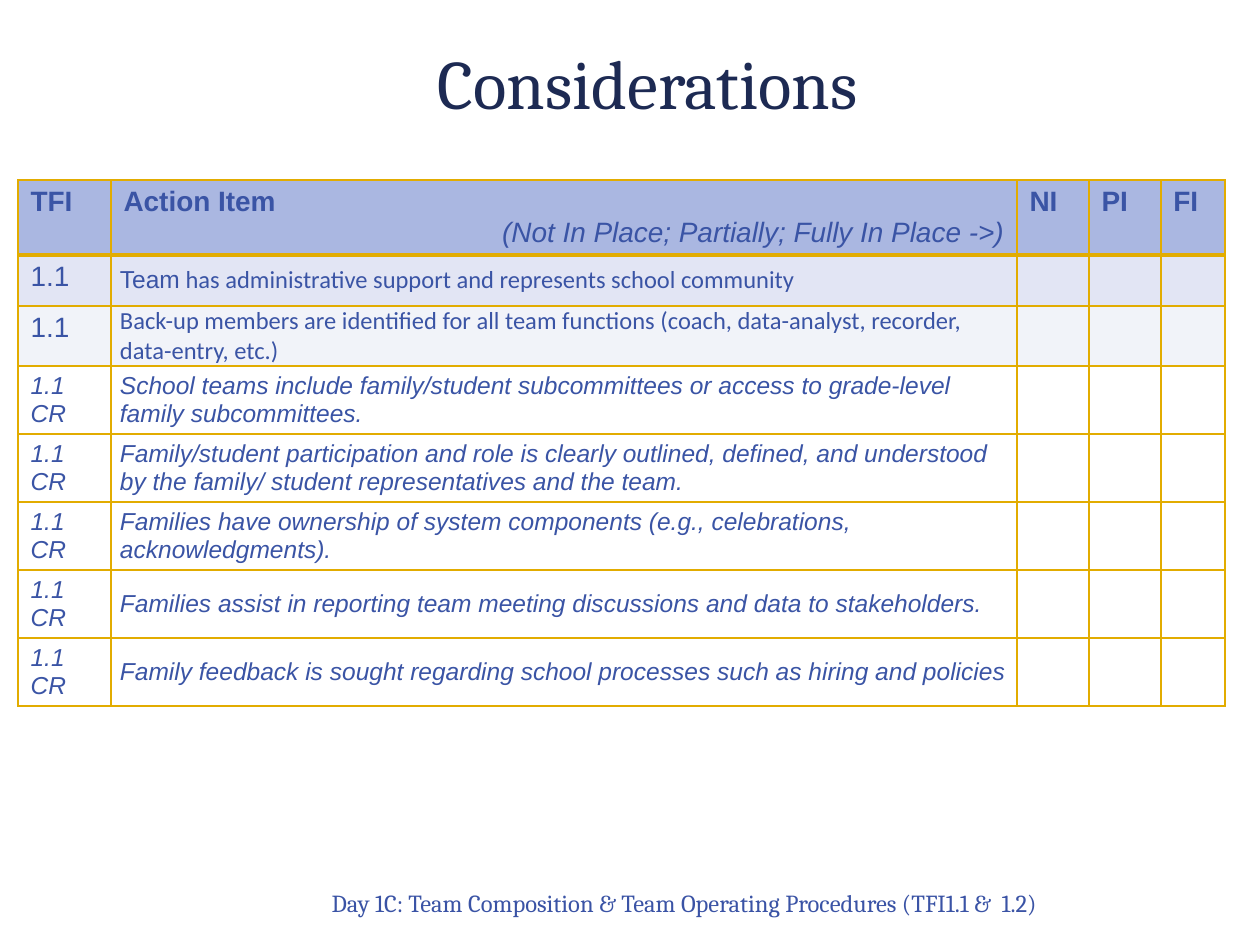
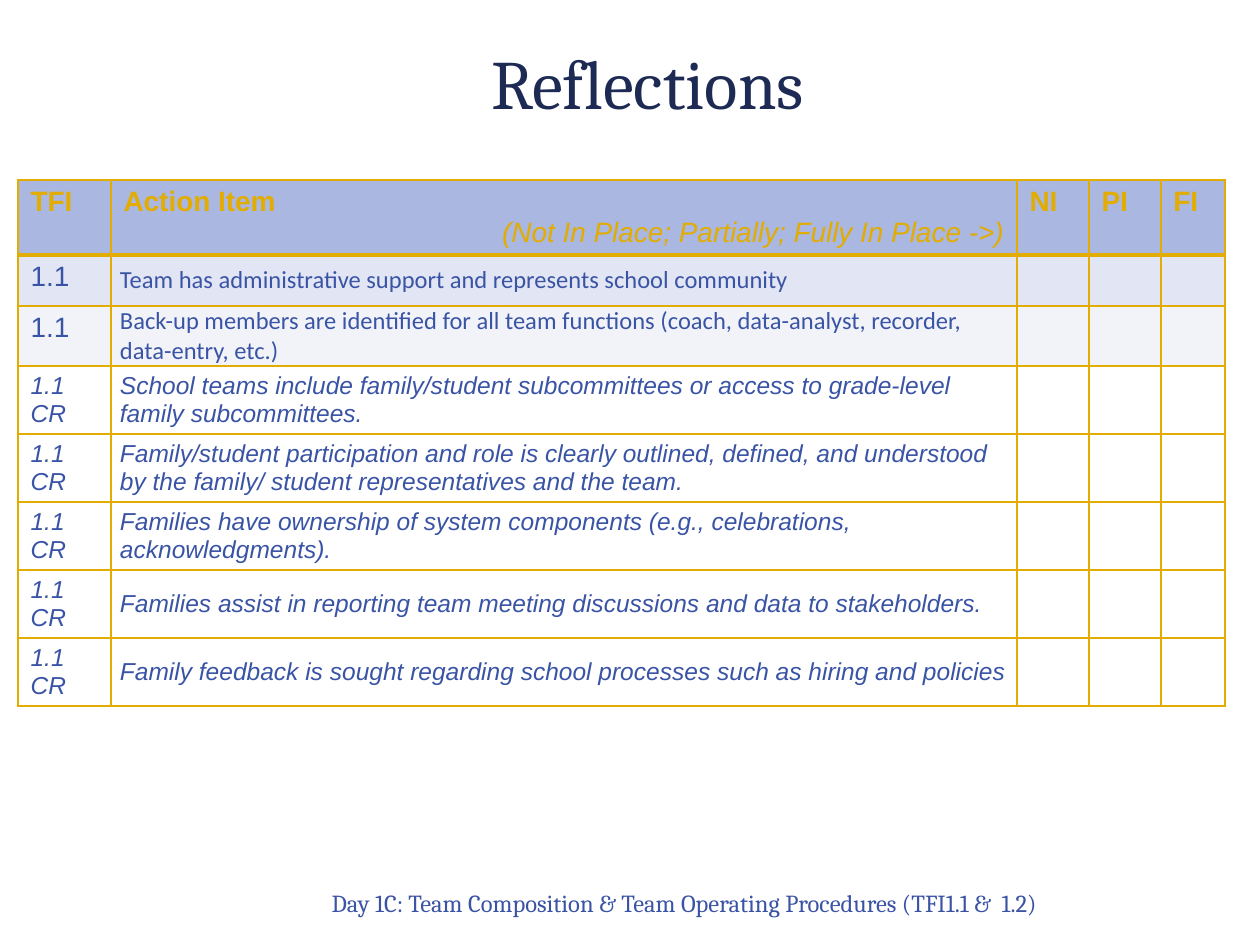
from dataclasses import dataclass
from typing import Any, NamedTuple

from lxml.etree import SubElement as Sub
from pptx import Presentation
from pptx.dml.color import RGBColor as Rgb
from pptx.enum.text import MSO_ANCHOR as Anchor, MSO_AUTO_SIZE as Fit, PP_ALIGN as Align
from pptx.oxml.ns import qn
from pptx.util import Emu, Pt


@dataclass(frozen=True)
class Theme:
    """Colours, fonts and type sizes of the deck."""
    navy: str = "1D2A53"
    blue: str = "3A54A5"
    foot: str = "3A53A5"
    gold: str = "E2AC00"
    head: str = "AAB7E1"
    tint: str = "E2E5F4"
    pale: str = "F1F3F9"
    white: str = "FFFFFF"
    serif: str = "Cambria"
    sans: str = "Arial"
    body: str = "Calibri"
    title_pt: float = 39.6
    head_pt: float = 16
    text_pt: float = 14
    thin: float = 1
    thick: float = 3


class Box(NamedTuple):
    """A place on the slide in px."""
    left: int
    top: int
    width: int
    height: int


class Style(NamedTuple):
    """The look of a run of text."""
    name: str
    size: float
    color: str
    bold: bool = False
    italic: bool = False


class Run(NamedTuple):
    """A piece of text in one style."""
    text: str
    style: Style


class Row(NamedTuple):
    """One body row of the action table."""
    tag: Run
    item: list[Run]
    fill: str
    height: int
    anchor: Any


class Page(NamedTuple):
    """What one slide has of its own."""
    title: str
    head: str
    lead: str


THEME = Theme()
SCALE = 914400 / 126
SIZE = Box(0, 0, 1260, 945)
TITLE = Box(166, 38, 963, 88)
FOOT = Box(186, 843, 864, 81)
GRID = Box(18, 180, 1207, 525)
COLS = (93, 906, 72, 72, 64)
HEAD_H = 75
MARKS = ("NI", "PI", "FI")
FOOTER = "Day 1C: Team Composition & Team Operating Procedures (TFI1.1 &  1.2)"
FIRST = "Team has administrative support and represents school community"
BACKUP = ("Back-up members are identified for all team functions "
          "(coach, data-analyst, recorder, data-entry, etc.)")
FAMILY = (
    "School teams include family/student subcommittees or access to grade-level "
    "family subcommittees.",
    "Family/student participation and role is clearly outlined, defined, and "
    "understood by the family/ student representatives and the team.",
    "Families have ownership of system components (e.g., celebrations, "
    "acknowledgments).",
    "Families assist in reporting team meeting discussions and data to stakeholders.",
    "Family feedback is sought regarding school processes such as hiring and policies",
)
PAGES = (
    Page("Considerations", THEME.blue, "Team"),
    Page("Reflections", THEME.gold, ""),
)


def px(num: int) -> Emu:
    """Turn px into EMU."""
    return Emu(round(num * SCALE))


def put(obj: Any, vals: dict[str, Any]) -> None:
    """Set each named value on an object."""
    for key, val in vals.items():
        setattr(obj, key, val)


def place(shape: Any, box: Box) -> None:
    """Move and size a shape."""
    put(shape, {key: px(val) for key, val in box._asdict().items()})


def write(para: Any, runs: list[Run], align: Any = Align.LEFT) -> None:
    """Fill a paragraph with styled runs."""
    para.alignment = align
    for text, style in runs:
        run = para.add_run()
        run.text = text
        vals = style._asdict()
        run.font.color.rgb = Rgb.from_string(vals.pop("color"))
        put(run.font, vals | {"size": Pt(style.size)})


def paint(cell: Any, fill: str, base: float) -> None:
    """Give a cell its borders and fill."""
    props = cell._tc.get_or_add_tcPr()
    for side, width in zip("LRTB", (THEME.thin,) * 3 + (base,)):
        line = Sub(props, qn(f"a:ln{side}"), w=str(Pt(width)))
        Sub(Sub(line, qn("a:solidFill")), qn("a:srgbClr"), val=THEME.gold)
    cell.fill.solid()
    cell.fill.fore_color.rgb = Rgb.from_string(fill)


def body(page: Page) -> list[Row]:
    """List the body rows of a page."""
    tag = Style(THEME.sans, THEME.head_pt, THEME.blue)
    plain = Style(THEME.body, THEME.text_pt, THEME.blue)
    lead = plain._replace(name=THEME.sans)
    slant = lead._replace(italic=True)
    first = [Run(page.lead, lead)] if page.lead else []
    first.append(Run(FIRST.removeprefix(page.lead), plain))
    rows = [
        Row(Run("1.1", tag), first, THEME.tint, 51, Anchor.TOP),
        Row(Run("1.1", tag), [Run(BACKUP, plain)], THEME.pale, 60, Anchor.TOP),
    ]
    rows += [Row(Run("1.1 CR", slant), [Run(text, slant)], THEME.white, 68, Anchor.MIDDLE)
             for text in FAMILY]
    return rows


def add_head(table: Any, color: str) -> None:
    """Write the header row."""
    style = Style(THEME.sans, THEME.head_pt, color, bold=True)
    for cell, text in zip(table.rows[0].cells, ("TFI", "Action Item", *MARKS)):
        paint(cell, THEME.head, THEME.thick)
        write(cell.text_frame.paragraphs[0], [Run(text, style)])
    note = Run("(Not In Place; Partially; Fully In Place ->)",
               style._replace(bold=False, italic=True))
    write(table.cell(0, 1).text_frame.add_paragraph(), [note], Align.RIGHT)


def add_row(line: Any, row: Row) -> None:
    """Write one body row."""
    for cell in line.cells:
        paint(cell, row.fill, THEME.thin)
    tag, item = line.cells[0], line.cells[1]
    tag.vertical_anchor = row.anchor
    put(item, {"vertical_anchor": Anchor.MIDDLE, "margin_left": px(9),
               "margin_right": px(9), "margin_top": 0, "margin_bottom": 0})
    write(tag.text_frame.paragraphs[0], [row.tag])
    write(item.text_frame.paragraphs[0], row.item)


def add_grid(slide: Any, page: Page) -> None:
    """Draw the action table."""
    rows = body(page)
    table = slide.shapes.add_table(len(rows) + 1, len(COLS), *map(px, GRID)).table
    table.horz_banding = False
    for col, width in zip(table.columns, COLS):
        col.width = px(width)
    for line, height in zip(table.rows, [HEAD_H] + [row.height for row in rows]):
        line.height = px(height)
    add_head(table, page.head)
    for num, row in enumerate(rows, 1):
        add_row(table.rows[num], row)


def add_text(shape: Any, box: Box, run: Run, align: Any, anchor: Any) -> None:
    """Place a shape and write its one line."""
    place(shape, box)
    put(shape.text_frame, {"word_wrap": True, "auto_size": Fit.NONE,
                           "vertical_anchor": anchor})
    write(shape.text_frame.paragraphs[0], [run], align)


def add_page(deck: Any, page: Page) -> None:
    """Build one slide."""
    slide = deck.slides.add_slide(deck.slide_layouts[5])
    foot = slide.shapes.add_textbox(*map(px, FOOT))
    add_text(foot, FOOT, Run(FOOTER, Style(THEME.serif, THEME.text_pt, THEME.foot)),
             Align.RIGHT, Anchor.BOTTOM)
    add_grid(slide, page)
    name = Run(page.title, Style(THEME.serif, THEME.title_pt, THEME.navy))
    add_text(slide.shapes.title, TITLE, name, Align.CENTER, Anchor.MIDDLE)


def main() -> None:
    """Build and save the deck."""
    deck = Presentation()
    put(deck, {"slide_width": px(SIZE.width), "slide_height": px(SIZE.height)})
    for page in PAGES:
        add_page(deck, page)
    deck.save("out.pptx")


if __name__ == "__main__":
    main()
